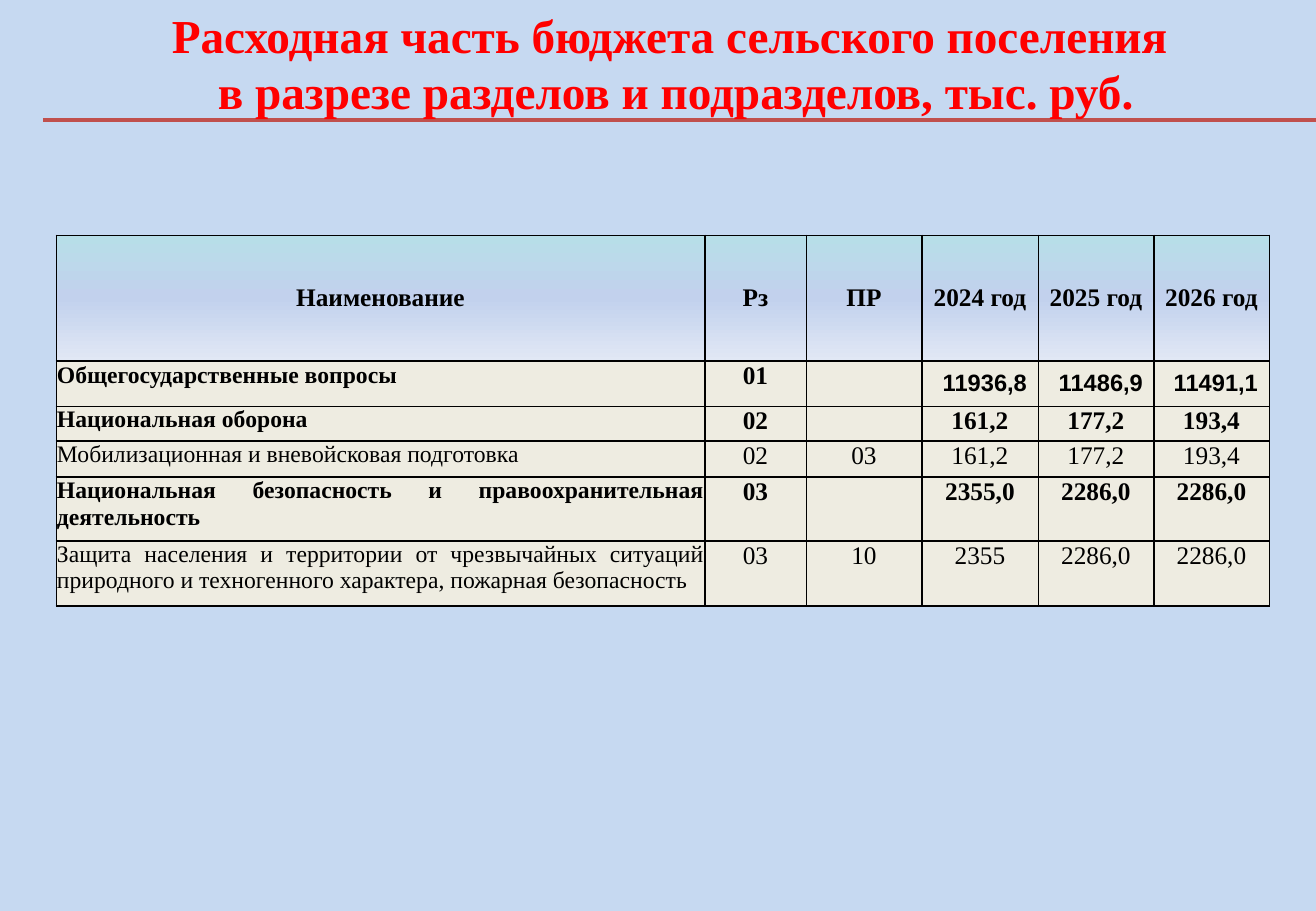
from lxml.etree import SubElement as Sub
from pptx import Presentation
from pptx.dml.color import RGBColor as RGB
from pptx.enum.shapes import MSO_CONNECTOR as Conn
from pptx.enum.text import MSO_ANCHOR as Anchor, PP_ALIGN as Align
from pptx.oxml.ns import qn
from pptx.util import Pt

PX = 7526
SKY = RGB(0xC6, 0xD9, 0xF1)
RED = RGB(0xFF, 0, 0)
BRICK = RGB(0xC0, 0x50, 0x4D)
BLACK = RGB(0, 0, 0)
CREAM = RGB(0xEE, 0xEC, 0xE1)
AQUA = RGB(0xB7, 0xDE, 0xE8)
BLUE = RGB(0xC2, 0xD1, 0xED)
PALE = RGB(0xE1, 0xE8, 0xF5)
SERIF = "Times New Roman"

COLS = [649, 101, 116, 116, 116, 115]
HIGH = [126, 45, 35, 36, 64, 65]
EDGES = [0.5, 1, 0.5, 1, 1, 1, 1]
ROWS = [
    ["Наименование", "Рз", "ПР", "2024 год", "2025 год", "2026 год"],
    ["Общегосударственные вопросы", "01", "", "11936,8", "11486,9", "11491,1"],
    ["Национальная оборона", "02", "", "161,2", "177,2", "193,4"],
    ["Мобилизационная и вневойсковая подготовка", "02", "03", "161,2", "177,2", "193,4"],
    ["Национальная безопасность и правоохранительная деятельность",
     "03", "", "2355,0", "2286,0", "2286,0"],
    ["Защита населения и территории от чрезвычайных ситуаций природного и "
     "техногенного характера, пожарная безопасность",
     "03", "10", "2355", "2286,0", "2286,0"],
]


def style(part, form):
    for key, val in form.items():
        setattr(part, key, val)


def paint(node, tone):
    Sub(node, qn("a:srgbClr"), val=str(tone))


deck = Presentation()
style(deck, {"slide_width": 1316 * PX, "slide_height": 911 * PX})
slide = deck.slides.add_slide(deck.slide_layouts[6])
back = slide.background.fill
back.solid()
back.fore_color.rgb = SKY

rule = slide.shapes.add_connector(Conn.STRAIGHT, 43 * PX, 120 * PX, 1316 * PX, 120 * PX)
rule.line.color.rgb = BRICK
rule.line.width = Pt(2.5)
Sub(rule._element.spPr, qn("a:effectLst"))

title = slide.shapes.add_textbox(64 * PX, 0, 1223 * PX, 126 * PX)
title.text_frame.word_wrap = True
head = title.text_frame.paragraphs[0]
head.text = "Расходная часть бюджета сельского поселения \vв разрезе разделов и подразделов, тыс. руб."
head.alignment = Align.CENTER
for run in head.runs:
    style(run.font, {"name": SERIF, "size": Pt(28), "bold": True})
    run.font.color.rgb = RED

frame = slide.shapes.add_table(len(ROWS), len(COLS), 56 * PX, 235 * PX,
                               sum(COLS) * PX, sum(HIGH) * PX)
table = frame.table
style(table, {"first_row": False, "horz_banding": False})
for col, wide in zip(table.columns, COLS):
    col.width = wide * PX
for row, high in zip(table.rows, HIGH):
    row.height = high * PX

for r, row in enumerate(ROWS):
    for c, text in enumerate(row):
        cell = table.cell(r, c)
        top = r == 0
        total = r == 1 and c > 2
        side, roof, base = (11, 10, 10) if top else (11, 6, 6) if total else (1, 1, 0)
        style(cell, {
            "margin_left": side * PX, "margin_right": side * PX,
            "margin_top": roof * PX, "margin_bottom": base * PX,
            "vertical_anchor": Anchor.MIDDLE if top or total else Anchor.TOP,
        })

        props = cell._tc.get_or_add_tcPr()
        sides = {"L": 1 if c % 2 else 0.5, "R": 0.5 if c % 2 else 1,
                 "T": EDGES[r], "B": EDGES[r + 1]}
        for name, wide in sides.items():
            edge = Sub(props, qn("a:ln" + name), w=str(Pt(wide)))
            paint(Sub(edge, qn("a:solidFill")), BLACK)
        if top:
            grad = Sub(props, qn("a:gradFill"), rotWithShape="1")
            stops = Sub(grad, qn("a:gsLst"))
            for i, tone in enumerate([AQUA, BLUE, PALE]):
                paint(Sub(stops, qn("a:gs"), pos=str(i * 50000)), tone)
            Sub(grad, qn("a:lin"), ang="5400000", scaled="0")
        else:
            cell.fill.solid()
            cell.fill.fore_color.rgb = CREAM

        para = cell.text_frame.paragraphs[0]
        if not text:
            Sub(para._p, qn("a:endParaRPr"), sz="1400")
            continue
        para.alignment = (Align.RIGHT if total else
                          Align.CENTER if top or c else Align.JUSTIFY)
        run = para.add_run()
        run.text = text
        style(run.font, {
            "name": "Arial" if total else SERIF,
            "size": Pt(14 if total or (c == 0 and not top) else 15),
            "bold": r not in (3, 5),
        })
        run.font.color.rgb = BLACK

deck.save("out.pptx")
